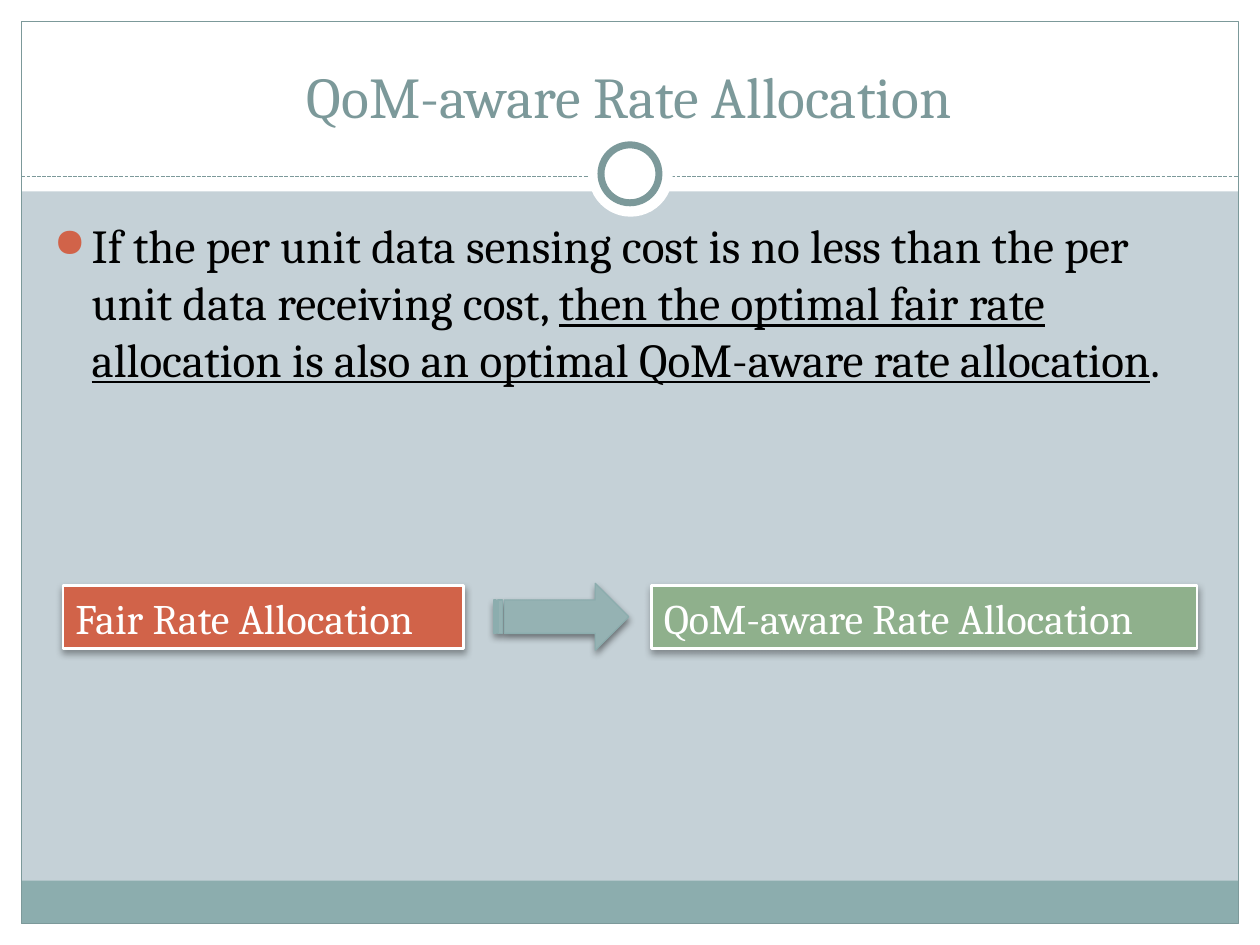
import dataclasses
from typing import Optional

import pptx
import pptx.dml.color
import pptx.enum.dml
import pptx.enum.shapes
import pptx.enum.text
import pptx.oxml
import pptx.oxml.ns
import pptx.util
from pptx.util import Inches

SHAPES = pptx.enum.shapes.MSO_SHAPE
ANCHOR = pptx.enum.text.MSO_ANCHOR
NS = pptx.oxml.ns.nsdecls("a")
FONT = "Cambria"
WHITE, BLACK = "FFFFFF", "000000"
SLATE, TEAL, RUST, GREEN = "7C999A", "8CADAE", "D16349", "8FB08C"
WIDTH, HEIGHT, MARGIN = 10, 7.5, 0.17


@dataclasses.dataclass
class Block:
    left: float
    top: float
    width: float
    height: float
    fill: Optional[str] = WHITE
    line: Optional[str] = None
    weight: float = 0.75
    kind: int = SHAPES.RECTANGLE
    shadow: int = 0  # opacity in percent
    label: str = ""


def color(value: str) -> pptx.dml.color.RGBColor:
    return pptx.dml.color.RGBColor.from_string(value)


def add_run(paragraph, text: str, size: float, ink: str, underline: bool = False) -> None:
    run = paragraph.add_run()
    run.text = text
    run.font.name = FONT
    run.font.size = pptx.util.Pt(size)
    run.font.color.rgb = color(ink)
    if underline:
        run.font.underline = True


def add_shadow(shape, opacity: int) -> None:
    effects = shape._element.spPr.find(pptx.oxml.ns.qn("a:effectLst"))
    effects.append(pptx.oxml.parse_xml(
        f'<a:outerShdw {NS} blurRad="{pptx.util.Pt(4)}" dist="{pptx.util.Pt(2)}" '
        f'dir="5400000" rotWithShape="0"><a:srgbClr val="{BLACK}">'
        f'<a:alpha val="{opacity * 1000}"/></a:srgbClr></a:outerShdw>'))


def add_block(slide, block: Block) -> None:
    shape = slide.shapes.add_shape(
        block.kind, Inches(block.left), Inches(block.top),
        Inches(block.width), Inches(block.height))
    shape.shadow.inherit = False
    if block.fill:
        shape.fill.solid()
        shape.fill.fore_color.rgb = color(block.fill)
    else:
        shape.fill.background()
    if block.line:
        shape.line.color.rgb = color(block.line)
        shape.line.width = pptx.util.Pt(block.weight)
    else:
        shape.line.fill.background()
    if block.shadow:
        add_shadow(shape, block.shadow)
    if block.label:
        shape.text_frame.vertical_anchor = ANCHOR.TOP
        shape.text_frame.word_wrap = True
        paragraph = shape.text_frame.paragraphs[0]
        paragraph.alignment = pptx.enum.text.PP_ALIGN.LEFT
        add_run(paragraph, block.label, 24, WHITE)


def add_text_area(slide, left: float, top: float, width: float, height: float, anchor):
    frame = slide.shapes.add_textbox(
        Inches(left), Inches(top), Inches(width), Inches(height)).text_frame
    frame.word_wrap = True
    frame.vertical_anchor = anchor
    return frame.paragraphs[0]


def add_divider(slide, y: float) -> None:
    divider = slide.shapes.add_connector(
        pptx.enum.shapes.MSO_CONNECTOR.STRAIGHT,
        Inches(MARGIN), Inches(y), Inches(WIDTH - MARGIN), Inches(y))
    divider.line.color.rgb = color(SLATE)
    divider.line.width = pptx.util.Pt(0.75)
    divider.line.dash_style = pptx.enum.dml.MSO_LINE.SQUARE_DOT
    divider._element.spPr.append(pptx.oxml.parse_xml(f"<a:effectLst {NS}/>"))


def add_bullet(paragraph) -> None:
    paragraph.space_before = pptx.util.Pt(5.4)
    properties = paragraph._p.get_or_add_pPr()
    properties.set("marL", str(Inches(0.3)))
    properties.set("indent", str(Inches(-0.3)))
    for tag in (f'<a:buClr {NS}><a:srgbClr val="{RUST}"/></a:buClr>',
                f'<a:buSzPct {NS} val="85000"/>',
                f'<a:buChar {NS} char="●"/>'):
        properties.append(pptx.oxml.parse_xml(tag))


def main() -> None:
    deck = pptx.Presentation()
    deck.slide_width, deck.slide_height = Inches(WIDTH), Inches(HEIGHT)
    slide = deck.slides.add_slide(deck.slide_layouts[6])
    slide.background.fill.solid()
    slide.background.fill.fore_color.rgb = color("C5D1D7")

    # White border, header band, footer band and frame
    inner_width, inner_height = WIDTH - 2 * MARGIN, HEIGHT - 2 * MARGIN
    for block in (
        Block(0, HEIGHT - MARGIN, WIDTH, MARGIN),
        Block(0, 0, WIDTH, 1.52),
        Block(0, 0, MARGIN, HEIGHT),
        Block(WIDTH - MARGIN, 0, MARGIN, HEIGHT),
        Block(MARGIN, 6.99, inner_width, 0.34, TEAL),
        Block(MARGIN, MARGIN, inner_width, inner_height, None, SLATE),
    ):
        add_block(slide, block)

    # Dashed divider with a ring over its middle
    add_divider(slide, 1.4)
    add_block(slide, Block(4.67, 1.05, 0.67, 0.67, kind=SHAPES.OVAL))
    add_block(slide, Block(4.77, 1.15, 0.46, 0.46, WHITE, SLATE, 4, SHAPES.OVAL))

    # Title
    title = add_text_area(slide, 0.33, 0.25, 9.33, 0.83, ANCHOR.BOTTOM)
    title.alignment = pptx.enum.text.PP_ALIGN.CENTER
    add_run(title, "QoM-aware Rate Allocation", 33, SLATE)

    # Statement
    statement = add_text_area(slide, 0.33, 1.67, 9.3, 5, ANCHOR.TOP)
    add_bullet(statement)
    add_run(statement, "If the per unit data sensing cost is no less than the per "
            "unit data receiving cost, ", 27, BLACK)
    add_run(statement, "then the optimal fair rate allocation is also an optimal "
            "QoM-aware rate allocation", 27, BLACK, underline=True)
    add_run(statement, ".", 27, BLACK)

    # Fair allocation leads to QoM-aware allocation
    for block in (
        Block(0.5, 4.65, 3.18, 0.5, RUST, WHITE, 1.57, shadow=35,
              label="Fair Rate Allocation"),
        Block(5.17, 4.65, 4.33, 0.5, GREEN, WHITE, 1.57, shadow=35,
              label="QoM-aware Rate Allocation"),
        Block(3.92, 4.63, 1.07, 0.53, "95B2B3", TEAL,
              kind=SHAPES.STRIPED_RIGHT_ARROW, shadow=45),
    ):
        add_block(slide, block)

    deck.save("out.pptx")


if __name__ == "__main__":
    main()
